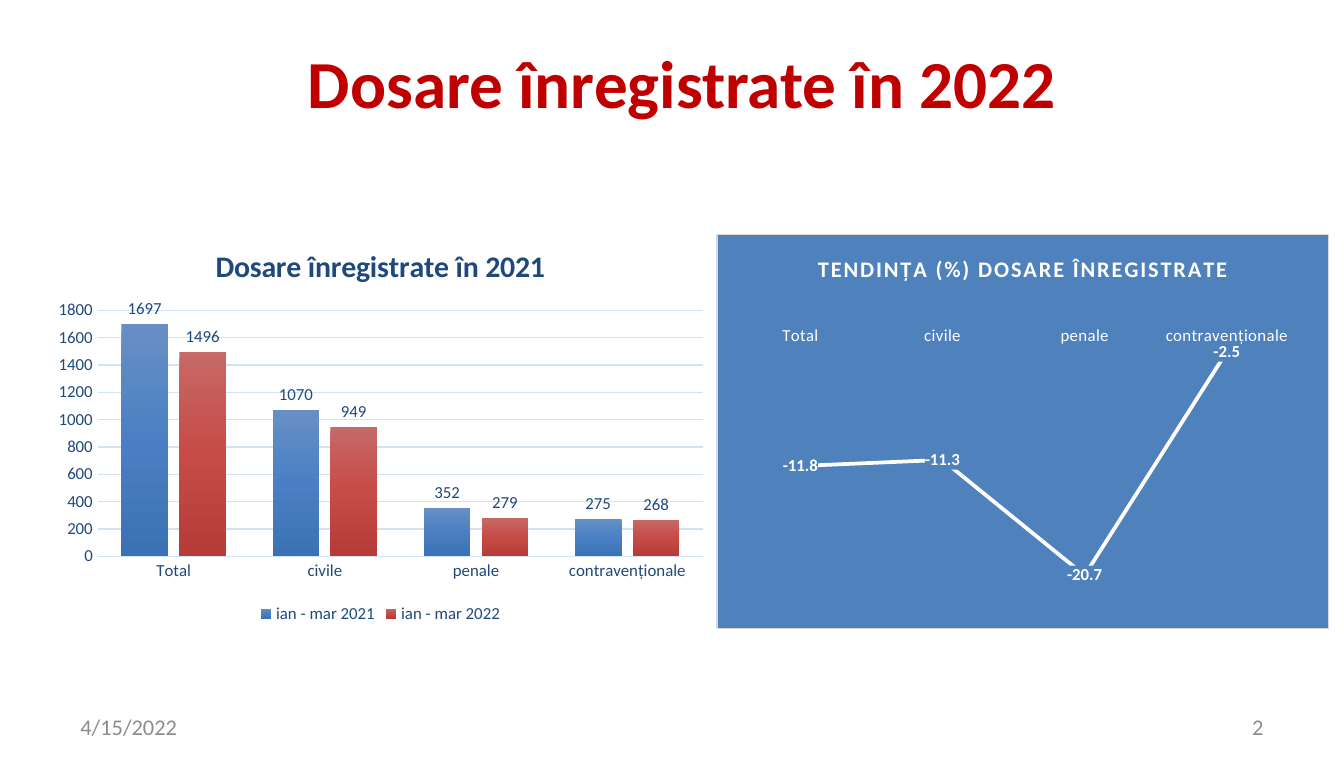
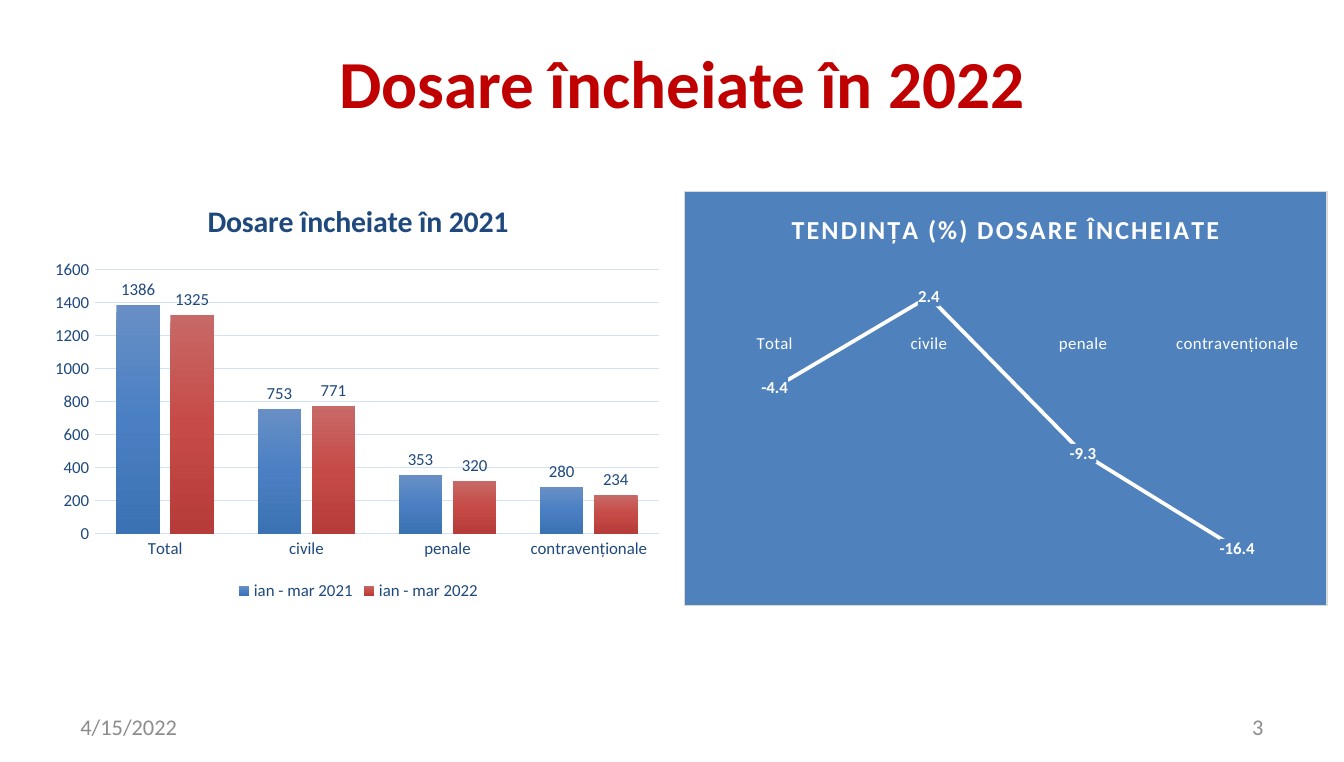
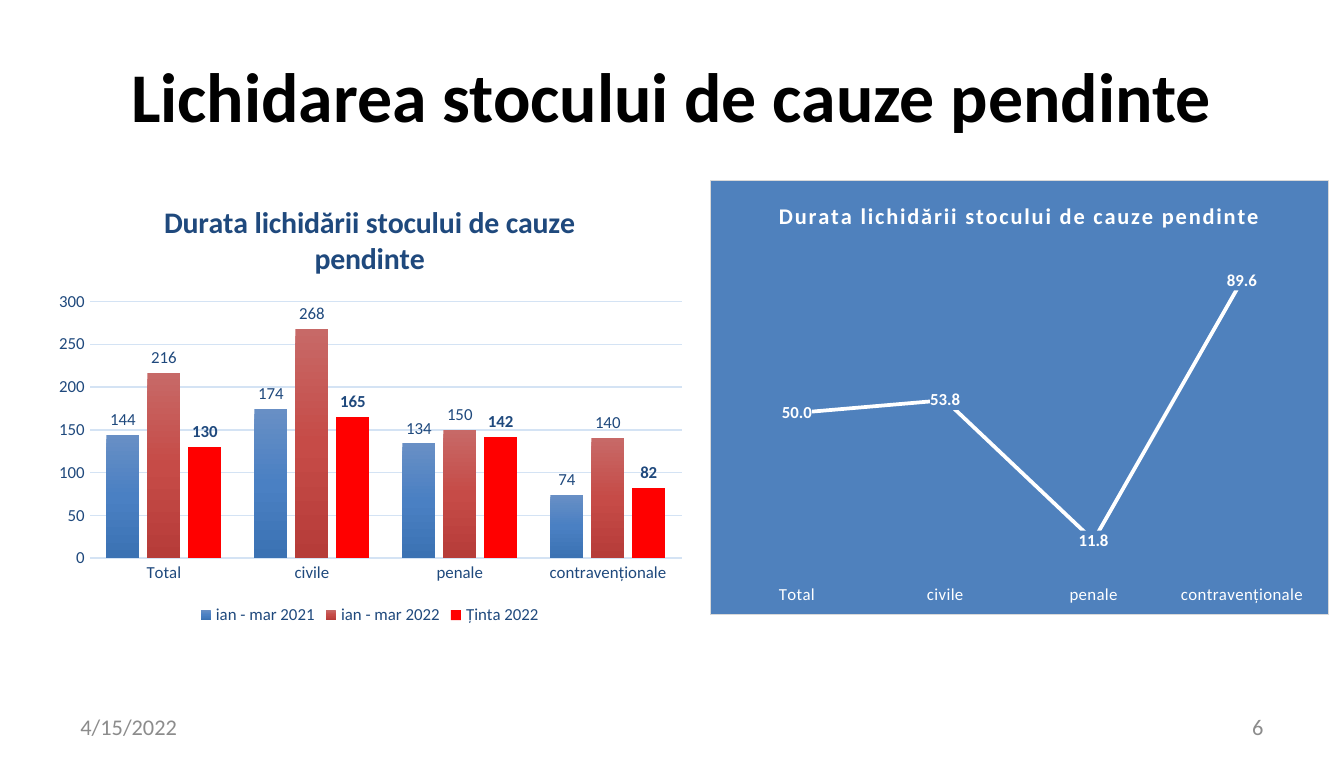
import pptx
import pptx.chart.data
import pptx.dml.color
import pptx.enum.chart
import pptx.enum.text
import pptx.oxml
import pptx.oxml.ns
import pptx.util
from lxml import etree

Inches = pptx.util.Inches
Pt = pptx.util.Pt
RGBColor = pptx.dml.color.RGBColor
ChartType = pptx.enum.chart.XL_CHART_TYPE
LabelPosition = pptx.enum.chart.XL_LABEL_POSITION
TickMark = pptx.enum.chart.XL_TICK_MARK
Align = pptx.enum.text.PP_ALIGN
Anchor = pptx.enum.text.MSO_ANCHOR
qn = pptx.oxml.ns.qn

FONT = "Calibri"
BLACK = RGBColor(0x00, 0x00, 0x00)
WHITE = RGBColor(0xFF, 0xFF, 0xFF)
GRAY = RGBColor(0x8C, 0x8C, 0x8C)
DARK_RED = RGBColor(0xC0, 0x00, 0x00)
RED = RGBColor(0xFF, 0x00, 0x00)
NAVY = RGBColor(0x1F, 0x49, 0x7D)
PANEL_BLUE = RGBColor(0x4F, 0x81, 0xBD)
PANEL_BORDER = RGBColor(0xD9, 0xD9, 0xD9)
GRID_BLUE = RGBColor(0xD4, 0xE3, 0xF4)
BLUE_STOPS = [RGBColor(0x68, 0x8F, 0xC5), RGBColor(0x4A, 0x80, 0xC3), RGBColor(0x3B, 0x72, 0xB3)]
RED_STOPS = [RGBColor(0xC7, 0x69, 0x67), RGBColor(0xC6, 0x4B, 0x47), RGBColor(0xB6, 0x3C, 0x39)]

DATE = "4/15/2022"
CATEGORIES = ["Total", "civile", "penale", "contravenționale"]
YEAR_2021 = "ian - mar 2021"
YEAR_2022 = "ian - mar 2022"
TARGET = "Ținta 2022"
TITLE_BOX = (1.74, 0.25, 6.67, 0.71)


def set_font(font, size, color, bold=False):
    font.name = FONT
    font.size = Pt(size)
    font.bold = bold
    font.color.rgb = color


def add_text(slide, text, box, size, color, align, bold=False, anchor=Anchor.MIDDLE):
    frame = slide.shapes.add_textbox(*map(Inches, box)).text_frame
    frame.word_wrap = True
    frame.vertical_anchor = anchor
    paragraph = frame.paragraphs[0]
    paragraph.text = text
    paragraph.alignment = align
    set_font(paragraph.font, size, color, bold)


def add_slide(presentation, number):
    """Add a blank slide with the date and slide number footer."""
    slide = presentation.slides.add_slide(presentation.slide_layouts[6])
    add_text(slide, DATE, (0.5, 5.26, 2.33, 0.3), 12, GRAY, Align.LEFT)
    add_text(slide, number, (7.17, 5.26, 2.33, 0.3), 12, GRAY, Align.RIGHT)
    return slide


def set_plot_area(chart, plot_box):
    """Fix the inner plot area, given as fractions of the chart."""
    plot_area = chart.element.xpath(".//c:plotArea")[0]
    for layout in plot_area.findall(qn("c:layout")):
        plot_area.remove(layout)
    layout = etree.Element(qn("c:layout"))
    manual = etree.SubElement(layout, qn("c:manualLayout"))
    settings = [("layoutTarget", "inner"), ("xMode", "edge"), ("yMode", "edge")]
    for name, value in settings + list(zip("xywh", plot_box)):
        etree.SubElement(manual, qn(f"c:{name}")).set("val", str(value))
    plot_area.insert(0, layout)


def panel_properties(border=False):
    """Return shape properties with the panel's blue fill."""
    outline = ""
    if border:
        outline = (f'<a:ln w="{Pt(0.75)}"><a:solidFill><a:srgbClr val="{PANEL_BORDER}"/>'
                   "</a:solidFill></a:ln>")
    return pptx.oxml.parse_xml(
        f'<c:spPr {pptx.oxml.ns.nsdecls("c", "a")}><a:solidFill>'
        f'<a:srgbClr val="{PANEL_BLUE}"/></a:solidFill>{outline}</c:spPr>')


def add_chart(slide, kind, box, plot_box, title, title_size, color, series, number_format):
    """Add a chart with the title, category axis and labels that all charts share."""
    data = pptx.chart.data.CategoryChartData(number_format=number_format)
    data.categories = CATEGORIES
    for name, values in series.items():
        data.add_series(name, values)
    chart = slide.shapes.add_chart(kind, *map(Inches, box), data).chart
    set_font(chart.font, 10, BLACK)
    chart.has_title = True
    chart.chart_title.include_in_layout = False
    paragraph = chart.chart_title.text_frame.paragraphs[0]
    paragraph.text = title
    set_font(paragraph.font, title_size, color, bold=True)
    axis = chart.category_axis
    axis.major_tick_mark = TickMark.NONE
    set_font(axis.tick_labels.font, 9, color)
    chart.plots[0].vary_by_categories = False
    set_plot_area(chart, plot_box)
    return chart


def add_labels(series, color, position, number_format, bold):
    labels = series.data_labels
    labels.show_value = True
    labels.position = position
    labels.number_format = number_format
    labels.number_format_is_linked = False
    set_font(labels.font, 9, color, bold)


def fill_gradient(chart, series, colors):
    """Fill the bars with evenly spaced colours from top to bottom."""
    series.format.fill.gradient()
    series.format.fill.gradient_angle = 270
    stops = chart.element.xpath(".//a:gsLst")[-1]
    stops.clear()
    for index, color in enumerate(colors):
        stop = etree.SubElement(stops, qn("a:gs"), pos=str(index * 100000 // (len(colors) - 1)))
        etree.SubElement(stop, qn("a:srgbClr"), val=str(color))


def add_column_chart(slide, box, plot_box, title, series, number_format="General"):
    chart = add_chart(slide, ChartType.COLUMN_CLUSTERED, box, plot_box, title, 16, NAVY,
                      series, number_format)
    chart.has_legend = True
    chart.legend.position = pptx.enum.chart.XL_LEGEND_POSITION.BOTTOM
    chart.legend.include_in_layout = False
    set_font(chart.legend.font, 9, NAVY)
    axis = chart.value_axis
    axis.major_tick_mark = TickMark.NONE
    axis.format.line.fill.background()
    set_font(axis.tick_labels.font, 9, NAVY)
    for line in (axis.major_gridlines.format.line, chart.category_axis.format.line):
        line.color.rgb = GRID_BLUE
        line.width = Pt(0.75)
    plot = chart.plots[0]
    plot.gap_width = 100
    plot.overlap = -24
    gradients = {YEAR_2021: BLUE_STOPS, YEAR_2022: RED_STOPS}
    for bars in plot.series:
        if bars.name in gradients:
            fill_gradient(chart, bars, gradients[bars.name])
        else:
            bars.format.fill.solid()
            bars.format.fill.fore_color.rgb = RED
        add_labels(bars, NAVY, LabelPosition.OUTSIDE_END, number_format, bars.name == TARGET)


def add_trend_chart(slide, kind, box, plot_box, title, title_size, values, scale):
    """Add a white trend line on a blue panel."""
    chart = add_chart(slide, kind, box, plot_box, title, title_size, WHITE,
                      {"Series 1": values}, "0.0")
    chart.has_legend = False
    chart.category_axis.format.line.fill.background()
    axis = chart.value_axis
    axis.minimum_scale, axis.maximum_scale = scale
    axis.has_major_gridlines = False
    axis.visible = False
    trend = chart.plots[0].series[0]
    trend.smooth = False
    trend.marker.style = pptx.enum.chart.XL_MARKER_STYLE.NONE
    trend.format.line.color.rgb = WHITE
    trend.format.line.width = Pt(2)
    add_labels(trend, WHITE, LabelPosition.CENTER, "0.0", bold=True)
    chart.element.xpath("c:txPr")[0].addprevious(panel_properties(border=True))
    chart.element.xpath(".//c:ser/c:dLbls/c:txPr")[0].addprevious(panel_properties())
    for parent, spacing in (("c:title", "100"), ("c:catAx", "20")):
        for properties in chart.element.xpath(f".//{parent}//a:defRPr"):
            properties.set("spc", spacing)


def add_registered_slide(presentation):
    slide = add_slide(presentation, "2")
    add_text(slide, "Dosare înregistrate în 2022", TITLE_BOX, 36, DARK_RED, Align.CENTER,
             bold=True, anchor=Anchor.BOTTOM)
    add_trend_chart(slide, ChartType.LINE, (5.33, 1.74, 4.56, 2.94), (0.02, 0.22, 0.93, 0.78),
                    "TENDINȚA (%) DOSARE ÎNREGISTRATE", 12, [-11.8, -11.3, -20.7, -2.5], (-25, 0))
    add_column_chart(slide, (0.33, 1.68, 5, 3), (0.08, 0.21, 0.9, 0.61),
                     "Dosare înregistrate în 2021",
                     {YEAR_2021: [1697, 1070, 352, 275], YEAR_2022: [1496, 949, 279, 268]})


def add_closed_slide(presentation):
    slide = add_slide(presentation, "3")
    add_text(slide, "Dosare încheiate în 2022", TITLE_BOX, 36, DARK_RED, Align.CENTER,
             bold=True, anchor=Anchor.BOTTOM)
    add_column_chart(slide, (0.33, 1.34, 4.67, 3.17), (0.08, 0.21, 0.9, 0.62),
                     "Dosare încheiate în 2021",
                     {YEAR_2021: [1386, 753, 353, 280], YEAR_2022: [1325, 771, 320, 234]})
    add_trend_chart(slide, ChartType.LINE_STACKED, (5.09, 1.42, 4.79, 3.09),
                    (0.02, 0.17, 0.96, 0.81), "TENDINȚA (%) DOSARE ÎNCHEIATE", 14,
                    [-4.4, 2.4, -9.3, -16.4], (-20, 5))


def add_backlog_slide(presentation):
    slide = add_slide(presentation, "6")
    add_text(slide, "Lichidarea stocului de cauze pendinte", (0.5, 0.23, 9, 0.95), 37.4, BLACK,
             Align.CENTER, bold=True)
    title = "Durata lichidării stocului de cauze pendinte"
    add_column_chart(slide, (0.33, 1.34, 4.84, 3.35), (0.07, 0.27, 0.91, 0.57), title,
                     {YEAR_2021: [144, 174, 134, 74], YEAR_2022: [216, 268, 150, 140],
                      TARGET: [130, 165, 142, 82]}, "#,##0")
    add_trend_chart(slide, ChartType.LINE_STACKED, (5.28, 1.34, 4.61, 3.24),
                    (0.02, 0.15, 0.96, 0.77), title, 12, [50, 53.8, 11.8, 89.6], (0, 100))


def main():
    presentation = pptx.Presentation()
    presentation.slide_width = Inches(10)
    presentation.slide_height = Inches(5.67)
    add_registered_slide(presentation)
    add_closed_slide(presentation)
    add_backlog_slide(presentation)
    presentation.save("out.pptx")


if __name__ == "__main__":
    main()
